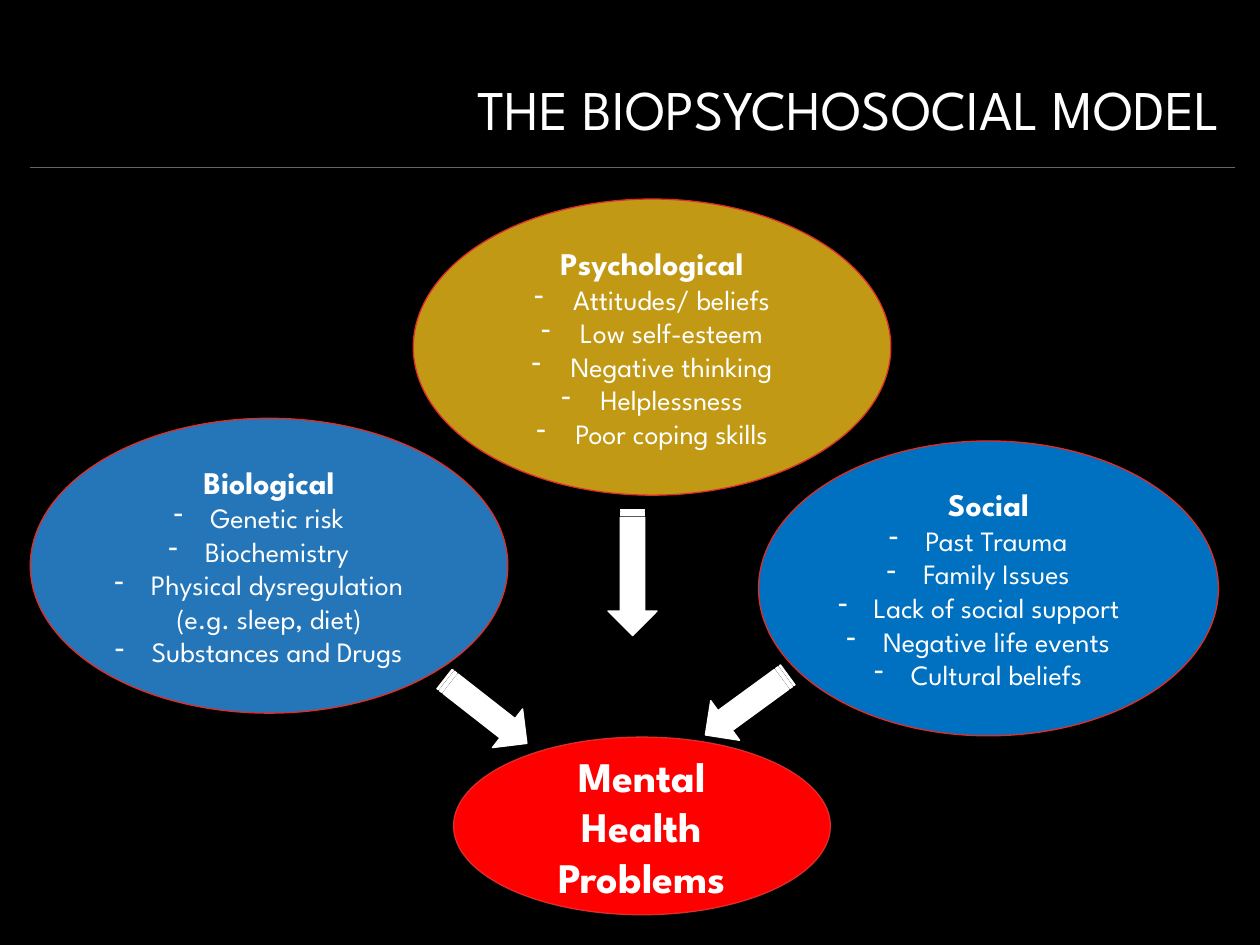
from pptx import Presentation
from pptx.dml.color import RGBColor
from pptx.enum.shapes import MSO_CONNECTOR, MSO_SHAPE
from pptx.enum.text import MSO_ANCHOR, PP_ALIGN
from pptx.oxml.ns import qn
from pptx.util import Inches, Pt
from lxml.etree import SubElement

THEME = {
    "font": "League Spartan",
    "background": "000000", "text": "FFFFFF", "rule": "666666", "outline": "DF2E28",
    "title": 32, "heading": 18, "item": 16, "outcome": 24,
}

TITLE = "THE BIOPSYCHOSOCIAL MODEL"
FACTORS = [
    {"name": "Social", "fill": "0070C0", "place": (6.02, 3.5, 3.65, 2.34), "indent": 0,
     "items": [" Past Trauma", " Family Issues", " Lack of social support",
               " Negative life events", " Cultural beliefs"]},
    {"name": "Psychological", "fill": "C19915", "place": (3.28, 1.58, 3.79, 2.35), "indent": 0.31,
     "items": ["Attitudes/ beliefs", "Low self-esteem", "Negative thinking",
               "Helplessness", "Poor coping skills"]},
    {"name": "Biological", "fill": "2476B9", "place": (0.24, 3.32, 3.79, 2.34), "indent": 0,
     "items": [" Genetic risk", " Biochemistry", " Physical dysregulation",
               "(e.g. sleep, diet)", " Substances and Drugs"]},
]
OUTCOME = {"name": "Mental Health Problems", "fill": "FF0000", "place": (3.6, 5.85, 2.99, 1.41)}
ARROWS = [
    ((4.52, 4.35, 1, 0.39), 90),
    ((3.44, 5.45, 0.83, 0.39), 38),
    ((5.52, 5.4, 0.81, 0.39), 143.9),
]


def color(name):
    return RGBColor.from_string(THEME.get(name, name))


def add_filled(page, kind, place, fill, line):
    shape = page.shapes.add_shape(kind, *map(Inches, place))
    shape.shadow.inherit = False
    shape.fill.solid()
    shape.fill.fore_color.rgb = color(fill)
    shape.line.color.rgb = color(line)
    shape.line.width = Pt(0.75)
    return shape


def write(paragraph, text, size, align=PP_ALIGN.CENTER, bold=False):
    paragraph.text = text
    paragraph.alignment = align
    paragraph.font.name = THEME["font"]
    paragraph.font.size = Pt(THEME[size])
    paragraph.font.bold = bold
    paragraph.font.color.rgb = color("text")


def add_dash(paragraph, indent):
    properties = paragraph._p.get_or_add_pPr()
    if indent:
        properties.set("marL", str(Inches(indent)))
        properties.set("indent", str(-Inches(indent)))
    SubElement(properties, qn("a:buChar"), char="-")


def add_ellipse(page, part, size):
    ellipse = add_filled(page, MSO_SHAPE.OVAL, part["place"], part["fill"], "outline")
    frame = ellipse.text_frame
    frame.word_wrap = True
    frame.vertical_anchor = MSO_ANCHOR.MIDDLE
    write(frame.paragraphs[0], part["name"], size, bold=True)
    for item in part.get("items", []):
        paragraph = frame.add_paragraph()
        if not item.startswith("("):
            add_dash(paragraph, part["indent"])
        write(paragraph, item, "item")


def add_title(page):
    title = page.shapes.title
    title.left, title.top, title.width, title.height = map(Inches, (2.83, 0.51, 6.96, 0.69))
    title.text_frame.vertical_anchor = MSO_ANCHOR.MIDDLE
    write(title.text_frame.paragraphs[0], TITLE, "title", PP_ALIGN.RIGHT)
    rule = page.shapes.add_connector(
        MSO_CONNECTOR.STRAIGHT, *map(Inches, (0.24, 1.33, 9.8, 1.33)))
    rule.line.color.rgb = color("rule")
    rule.line.width = Pt(0.75)
    SubElement(rule._element.spPr, qn("a:effectLst"))


def main():
    deck = Presentation()
    deck.slide_width, deck.slide_height = Inches(10), Inches(7.5)
    page = deck.slides.add_slide(deck.slide_layouts[5])
    page.background.fill.solid()
    page.background.fill.fore_color.rgb = color("background")
    add_title(page)
    for factor in FACTORS:
        add_ellipse(page, factor, "heading")
    add_ellipse(page, OUTCOME, "outcome")
    for place, angle in ARROWS:
        arrow = add_filled(page, MSO_SHAPE.STRIPED_RIGHT_ARROW, place, "text", "text")
        arrow.rotation = angle
    deck.save("out.pptx")


if __name__ == "__main__":
    main()
